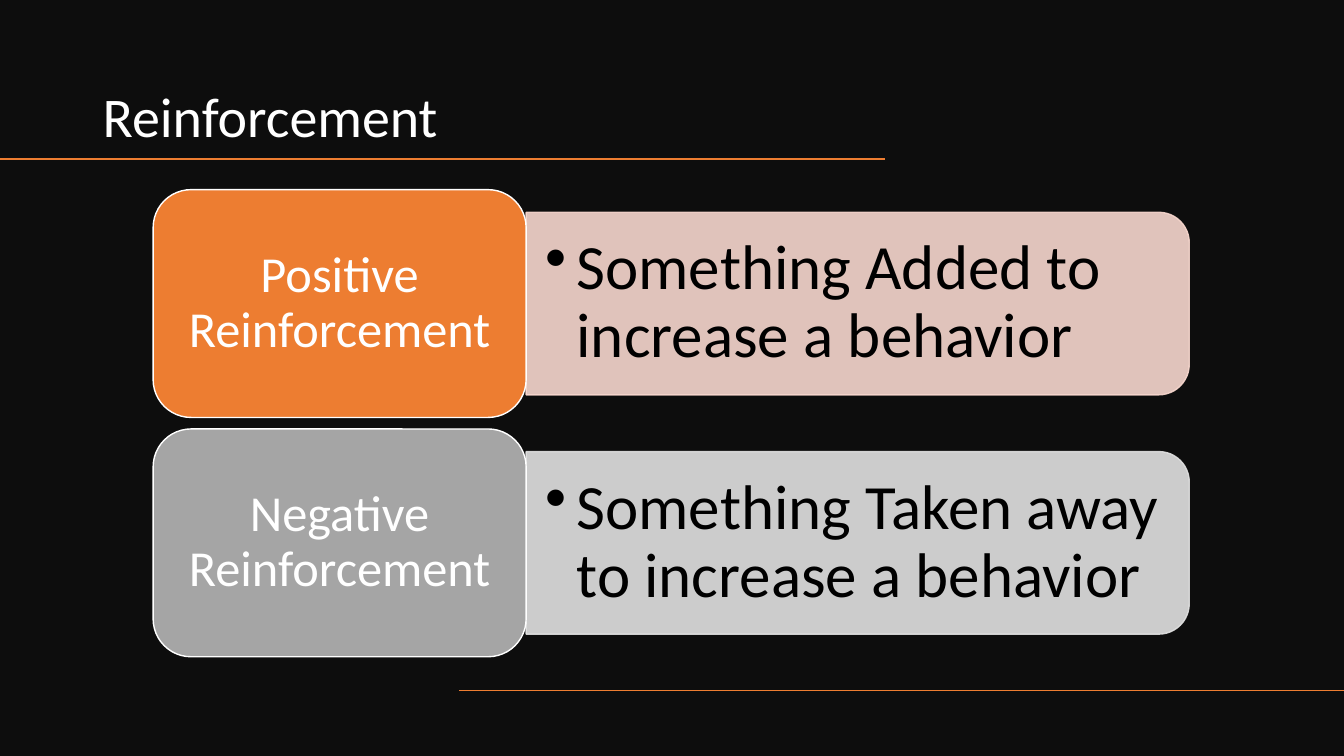
"""Build the Reinforcement slide: two labelled panels between accent lines."""
from lxml.etree import SubElement
from pptx import Presentation
from pptx.dml.color import RGBColor
from pptx.enum.shapes import MSO_CONNECTOR, MSO_SHAPE as Shape
from pptx.enum.text import MSO_ANCHOR as Anchor, PP_ALIGN as Align
from pptx.oxml.ns import qn
from pptx.util import Cm, Pt

BLACK = RGBColor(0x00, 0x00, 0x00)
WHITE = RGBColor(0xFF, 0xFF, 0xFF)
NIGHT = RGBColor(0x0D, 0x0D, 0x0D)
ORANGE = RGBColor(0xED, 0x7D, 0x31)
GRAY = RGBColor(0xA5, 0xA5, 0xA5)
PEACH = RGBColor(0xF8, 0xD7, 0xCE)
SILVER = RGBColor(0xE1, 0xE1, 0xE1)

WIDTH, HEIGHT = 33.87, 19.05
LABEL_LEFT, LABEL_TOP, LABEL_WIDTH, LABEL_HEIGHT = 3.86, 4.78, 9.4, 5.74
PANEL_WIDTH, PANEL_HEIGHT = 16.71, 4.6
ROW_STEP = 6.03
ROWS = [
    ("Positive Reinforcement", ORANGE, "Something Added to increase a behavior", PEACH),
    ("Negative Reinforcement", GRAY, "Something Taken away to increase a behavior", SILVER),
]


def write(shape, text, size, color=WHITE, font="Calibri", align=Align.LEFT,
          anchor=Anchor.MIDDLE, inset=(0.25, 0.13), bullet_indent=None):
    """Put one formatted paragraph into a shape."""
    frame = shape.text_frame
    frame.word_wrap = True
    frame.vertical_anchor = anchor
    frame.margin_left = frame.margin_right = Cm(inset[0])
    frame.margin_top = frame.margin_bottom = Cm(inset[1])
    paragraph = frame.paragraphs[0]
    paragraph.text = text
    paragraph.alignment = align
    paragraph.line_spacing = 0.9
    if bullet_indent:
        properties = paragraph._p.get_or_add_pPr()
        properties.set("marL", str(Cm(bullet_indent)))
        properties.set("indent", str(-Cm(bullet_indent)))
        SubElement(properties, qn("a:buChar"), char="•")
    run_font = paragraph.runs[0].font
    run_font.name = font
    run_font.size = Pt(size)
    run_font.color.rgb = color


class SlideBuilder:
    """Hold the current slide and its line style."""

    def __init__(self, slide, accent=ORANGE, line_width=1):
        """Keep the slide, the accent colour and the line width."""
        self.shapes = slide.shapes
        self.accent = accent
        self.line_width = Pt(line_width)

    def box(self, kind, left, top, width, height, fill, outline=None, opacity=100):
        """Add a filled preset shape."""
        shape = self.shapes.add_shape(kind, Cm(left), Cm(top), Cm(width), Cm(height))
        shape.shadow.inherit = False
        shape.fill.solid()
        shape.fill.fore_color.rgb = fill
        if outline is None:
            shape.line.fill.background()
        else:
            shape.line.color.rgb = outline
            shape.line.width = self.line_width
        if opacity < 100:
            for color in shape._element.spPr.iter(qn("a:srgbClr")):
                SubElement(color, qn("a:alpha"), val=str(opacity * 1000))
        return shape

    def text(self, left, top, width, height, text, **style):
        """Add a text box."""
        write(self.shapes.add_textbox(Cm(left), Cm(top), Cm(width), Cm(height)),
              text, **style)

    def rule(self, start, end, y):
        """Add a horizontal accent line."""
        line = self.shapes.add_connector(
            MSO_CONNECTOR.STRAIGHT, Cm(start), Cm(y), Cm(end), Cm(y))
        line.line.color.rgb = self.accent
        line.line.width = self.line_width
        SubElement(line._element.spPr, qn("a:effectLst"))

    def row(self, top, label, label_fill, detail, panel_fill):
        """Add a label with its rounded panel to the right."""
        middle = top + LABEL_HEIGHT / 2
        panel_left = LABEL_LEFT + LABEL_WIDTH
        panel = self.box(
            Shape.ROUND_2_SAME_RECTANGLE,
            panel_left + (PANEL_WIDTH - PANEL_HEIGHT) / 2, middle - PANEL_WIDTH / 2,
            PANEL_HEIGHT, PANEL_WIDTH, panel_fill, outline=panel_fill, opacity=90)
        panel.rotation = 90
        self.text(panel_left, middle - 2.07, 16.51, 4.14, detail, size=45,
                  color=BLACK, inset=(0.48, 0.24), bullet_indent=0.79)
        label_box = self.box(Shape.ROUNDED_RECTANGLE, LABEL_LEFT, top,
                             LABEL_WIDTH, LABEL_HEIGHT, label_fill, outline=WHITE)
        write(label_box, label, size=36, align=Align.CENTER, inset=(0.38, 0.19))


def main():
    """Compose the slide and save it."""
    presentation = Presentation()
    presentation.slide_width, presentation.slide_height = Cm(WIDTH), Cm(HEIGHT)
    builder = SlideBuilder(presentation.slides.add_slide(presentation.slide_layouts[6]))
    builder.box(Shape.RECTANGLE, 0, 0, WIDTH, HEIGHT, NIGHT)
    builder.text(2.34, 1.07, 19.96, 2.84, "Reinforcement", size=40, anchor=Anchor.BOTTOM)
    builder.rule(22.3, 0, 4.01)
    builder.rule(WIDTH, 11.56, 17.4)
    for index, row in enumerate(ROWS):
        builder.row(LABEL_TOP + index * ROW_STEP, *row)
    presentation.save("out.pptx")


if __name__ == "__main__":
    main()
